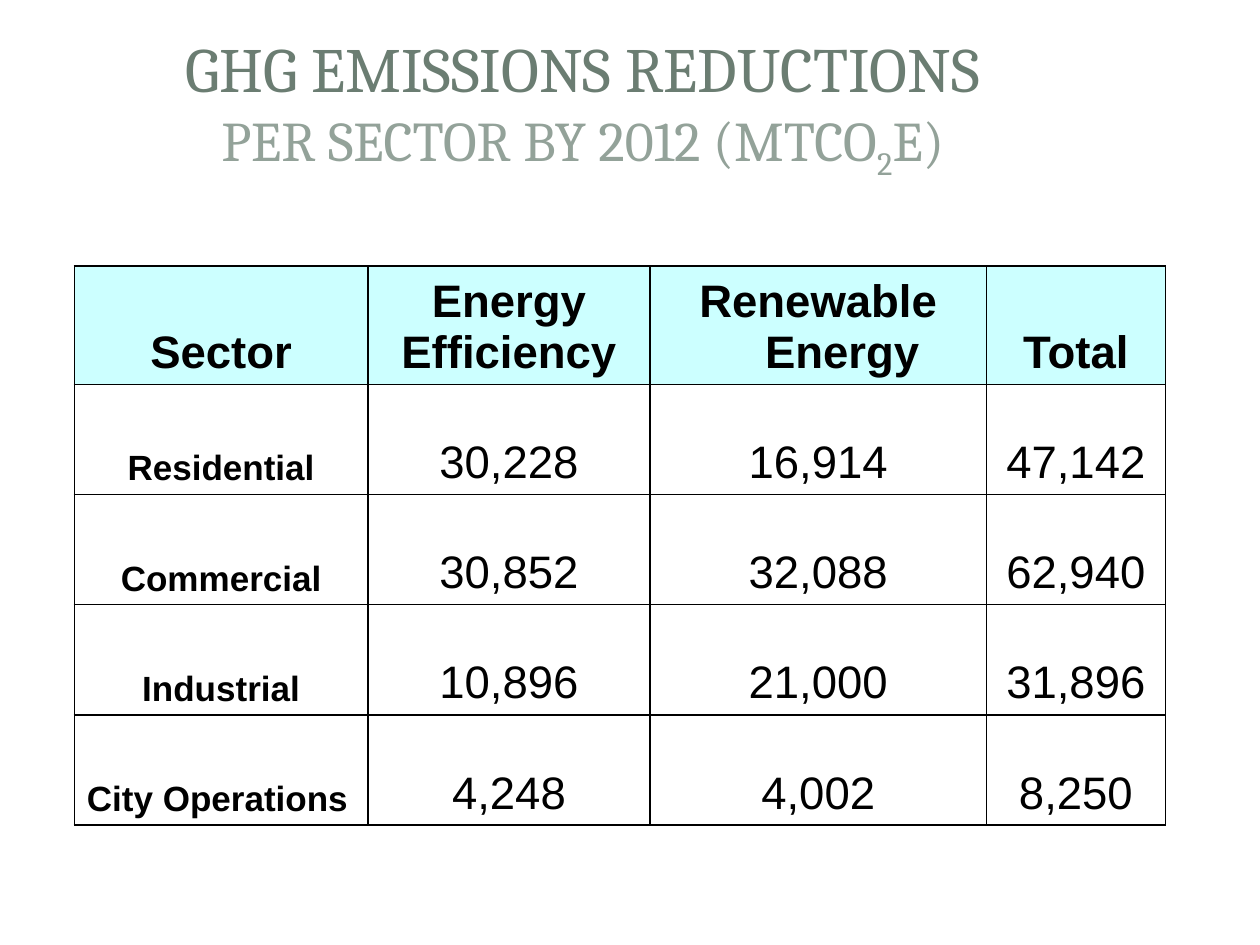
from dataclasses import dataclass

from lxml import etree
from pptx import Presentation
from pptx.dml.color import RGBColor
from pptx.enum.shapes import MSO_SHAPE
from pptx.enum.text import MSO_ANCHOR, PP_ALIGN
from pptx.oxml.ns import qn
from pptx.util import Inches, Pt

LEFT = PP_ALIGN.LEFT
CENTER = PP_ALIGN.CENTER
MIDDLE = MSO_ANCHOR.MIDDLE
BOTTOM = MSO_ANCHOR.BOTTOM
RECTANGLE = MSO_SHAPE.RECTANGLE
ROUNDED = MSO_SHAPE.ROUNDED_RECTANGLE


@dataclass(frozen=True)
class Theme:
    title_font: str = "Cambria"
    table_font: str = "Arial"
    panel_color: str = "FFFFFF"
    title_color: str = "6B7D72"
    subtitle_color: str = "93A299"
    text_color: str = "000000"
    border_color: str = "000000"
    header_fill: str = "CCFFFF"
    title_size: int = 36
    subtitle_size: int = 32
    figure_size: int = 26
    sector_size: int = 20
    border_width: int = 1
    hanging: float = 0.38
    cell_top_margin: float = 0.02


class SlideBuilder:
    def __init__(self, page, theme):
        self.page = page
        self.theme = theme

    def add_panel(self, kind, left, top, width, height, opacity=100):
        panel = self.page.shapes.add_shape(
            kind, Inches(left), Inches(top), Inches(width), Inches(height))
        panel.shadow.inherit = False
        panel.fill.solid()
        panel.fill.fore_color.rgb = RGBColor.from_string(self.theme.panel_color)
        panel.line.fill.background()
        if opacity < 100:
            color = panel._element.spPr.find(qn("a:solidFill"))[0]
            etree.SubElement(color, qn("a:alpha"), val=str(opacity * 1000))
        return panel

    def add_span(self, para, text, font, size, color, bold=False):
        span = para.add_run()
        span.text = text
        span.font.name = font
        span.font.size = Pt(size)
        span.font.bold = bold
        span.font.color.rgb = RGBColor.from_string(color)
        return span

    def add_title(self, heading, subtitle_parts, left, top, width, height):
        theme = self.theme
        box = self.page.shapes.add_textbox(
            Inches(left), Inches(top), Inches(width), Inches(height))
        frame = box.text_frame
        frame.word_wrap = True
        frame.vertical_anchor = MIDDLE
        para = frame.paragraphs[0]
        para.alignment = CENTER
        self.add_span(para, heading, theme.title_font, theme.title_size, theme.title_color)
        para.add_line_break()
        for text, baseline in subtitle_parts:
            span = self.add_span(para, text, theme.title_font,
                                 theme.subtitle_size, theme.subtitle_color)
            if baseline:
                span.font._element.set("baseline", str(baseline * 1000))

    def add_borders(self, cell):
        properties = cell._tc.get_or_add_tcPr()
        for position, side in enumerate(("a:lnL", "a:lnR", "a:lnT", "a:lnB")):
            line = etree.Element(qn(side), w=str(Pt(self.theme.border_width)))
            fill = etree.SubElement(line, qn("a:solidFill"))
            etree.SubElement(fill, qn("a:srgbClr"), val=self.theme.border_color)
            properties.insert(position, line)

    def fill_cell(self, cell, lines, size, bold, alignment, fill=None):
        theme = self.theme
        cell.vertical_anchor = BOTTOM
        cell.margin_top = Inches(theme.cell_top_margin)
        if fill:
            cell.fill.solid()
            cell.fill.fore_color.rgb = RGBColor.from_string(fill)
        else:
            cell.fill.background()
        self.add_borders(cell)
        frame = cell.text_frame
        for index, text in enumerate(lines):
            para = frame.add_paragraph() if index else frame.paragraphs[0]
            para.alignment = alignment
            properties = para._p.get_or_add_pPr()
            properties.set("marL", str(Inches(theme.hanging)))
            properties.set("indent", str(-Inches(theme.hanging)))
            self.add_span(para, text, theme.table_font, size, theme.text_color, bold)

    def add_sector_table(self, headers, rows, left, top, widths, heights):
        theme = self.theme
        table = self.page.shapes.add_table(
            len(heights), len(widths), Inches(left), Inches(top),
            Inches(sum(widths)), Inches(sum(heights))).table
        for column, width in zip(table.columns, widths):
            column.width = Inches(width)
        for row, height in zip(table.rows, heights):
            row.height = Inches(height)
        for column, lines in enumerate(headers):
            self.fill_cell(table.cell(0, column), lines, theme.figure_size,
                           True, CENTER, theme.header_fill)
        for row, (sector, alignment, figures) in enumerate(rows, start=1):
            self.fill_cell(table.cell(row, 0), [sector], theme.sector_size, True, alignment)
            for column, figure in enumerate(figures, start=1):
                self.fill_cell(table.cell(row, column), [f"{figure:,}"],
                               theme.figure_size, False, CENTER)


def main():
    deck = Presentation()
    deck.slide_width = Inches(10)
    deck.slide_height = Inches(7.5)
    builder = SlideBuilder(deck.slides.add_slide(deck.slide_layouts[6]), Theme())

    background = builder.add_panel(ROUNDED, 0.1, 0.11, 9.8, 7.29)
    background.adjustments[0] = 0.02
    builder.add_panel(RECTANGLE, 0.3, 0.3, 9.4, 1.45, opacity=83)
    builder.add_panel(RECTANGLE, 0.41, 0.41, 9.17, 1.22)
    builder.add_title(
        "GHG EMISSIONS REDUCTIONS",
        [("PER SECTOR BY 2012 (MTCO", 0), ("2", -25), ("E)", 0)],
        0.5, 0.13, 8.25, 1.42)

    headers = [["Sector"], ["Energy", "Efficiency"], ["Renewable Energy"], ["Total"]]
    rows = [
        ("Residential", CENTER, (30228, 16914, 47142)),
        ("Commercial", CENTER, (30852, 32088, 62940)),
        ("Industrial", CENTER, (10896, 21000, 31896)),
        ("City Operations", LEFT, (4248, 4002, 8250)),
    ]
    header_height = 0.94
    row_height = (4.44 - header_height) / len(rows)
    builder.add_sector_table(headers, rows, 0.59, 2.11, [2.33, 2.24, 2.67, 1.42],
                             [header_height] + [row_height] * len(rows))
    deck.save("out.pptx")


if __name__ == "__main__":
    main()
